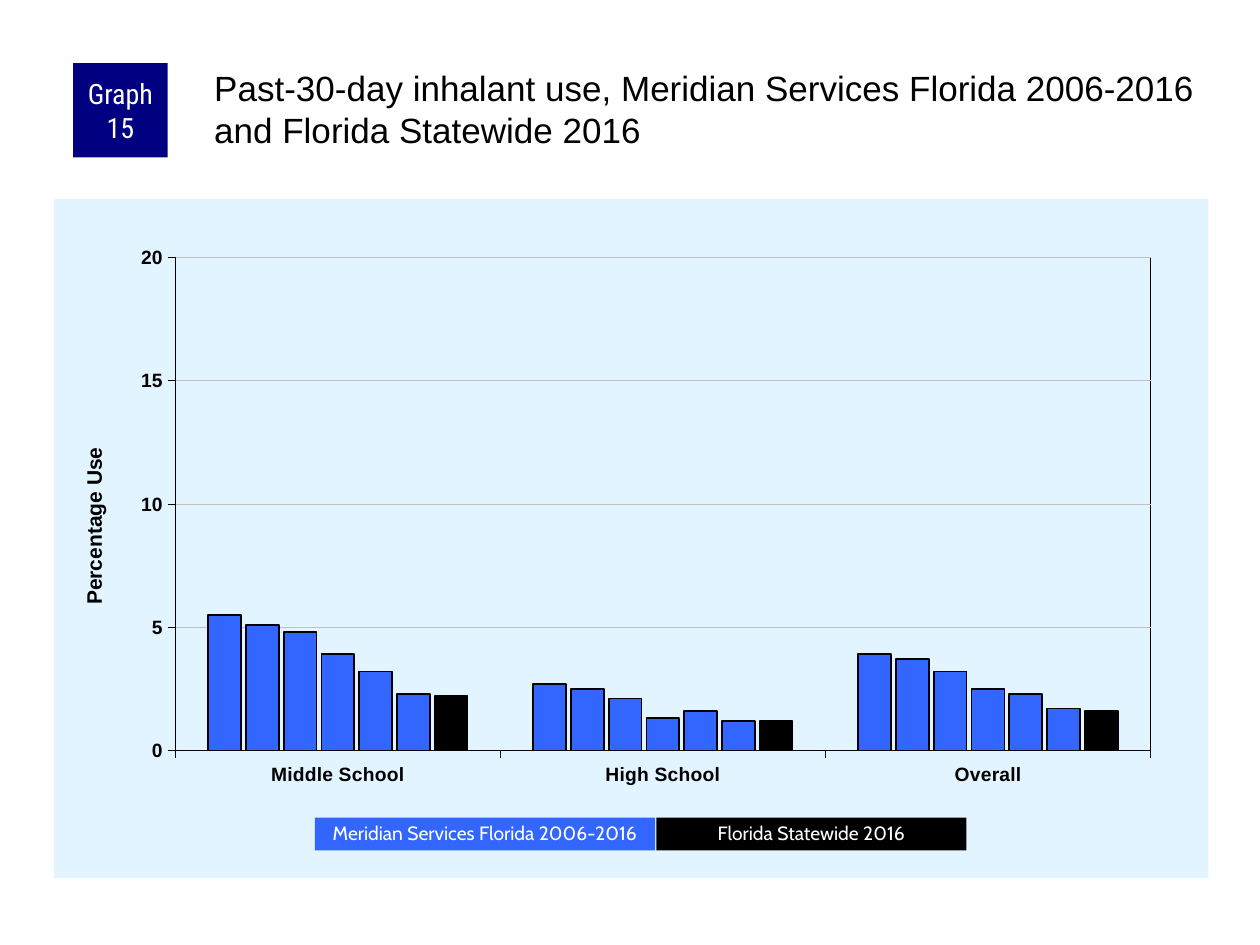
from lxml import etree
from pptx import Presentation
from pptx import util as u
from pptx.chart.data import CategoryChartData
from pptx.dml.color import RGBColor
from pptx.enum import chart as ch, shapes, text
from pptx.oxml import parse_xml
from pptx.oxml.ns import qn

PX = 9144  # EMU per px, 100 px to the inch
COLORS = {
    "panel": "E1F4FF", "region": "3366FF", "state": "000000", "badge": "000080",
    "ink": "000000", "grid": "C0C0C0", "light": "FFFFFF",
}
REGION = "Meridian Services Florida 2006-2016"
STATE = "Florida Statewide 2016"
SCHOOLS = ["Middle School", "High School", "Overall"]
USE_RATES = [
    (5.5, 2.7, 3.9), (5.1, 2.5, 3.7), (4.8, 2.1, 3.2), (3.9, 1.3, 2.5),
    (3.2, 1.6, 2.3), (2.3, 1.2, 1.7), (2.2, 1.2, 1.6),
]
NS = ('xmlns:c="http://schemas.openxmlformats.org/drawingml/2006/chart" '
      'xmlns:a="http://schemas.openxmlformats.org/drawingml/2006/main"')


def px(*lengths):
    return [u.Emu(length * PX) for length in lengths]


def color(name):
    return RGBColor.from_string(COLORS[name])


def style_font(font, size, name, ink, bold=False):
    font.size, font.name, font.bold = u.Pt(size), name, bold
    font.color.rgb = color(ink)


def style_line(line, ink, width):
    line.color.rgb = color(ink)
    line.width = u.Pt(width)


def set_insets(frame, left, top, right, bottom):
    frame.margin_left, frame.margin_top, frame.margin_right, frame.margin_bottom = px(
        left, top, right, bottom)


def add_label(slide, box, wording, fill, size, font, insets, spacing=1.0):
    """Filled rectangle with centred light text."""
    label = slide.shapes.add_shape(shapes.MSO_SHAPE.RECTANGLE, *px(*box))
    label.shadow.inherit = False
    label.fill.solid()
    label.fill.fore_color.rgb = color(fill)
    label.line.fill.background()
    frame = label.text_frame
    frame.word_wrap = True
    frame.vertical_anchor = text.MSO_ANCHOR.MIDDLE
    set_insets(frame, *insets)
    frame.text = wording
    line = frame.paragraphs[0]
    line.alignment = text.PP_ALIGN.CENTER
    line.line_spacing = spacing
    style_font(line.runs[0].font, size, font, "light")


def set_title(slide, box, wording):
    title = slide.shapes.title
    title.left, title.top, title.width, title.height = px(*box)
    frame = title.text_frame
    frame.word_wrap = True
    frame.auto_size = text.MSO_AUTO_SIZE.NONE
    frame.vertical_anchor = text.MSO_ANCHOR.TOP
    set_insets(frame, 3, 3, 0, 0)
    frame.text = wording
    heading = frame.paragraphs[0]
    heading.alignment = text.PP_ALIGN.LEFT
    style_font(heading.runs[0].font, 20, "Arial", "ink")


def manual_layout(x, y, size=None):
    parts = [("xMode", "edge"), ("yMode", "edge"), ("x", x), ("y", y)]
    if size:
        parts = [("layoutTarget", "inner"), *parts, ("w", size[0]), ("h", size[1])]
    body = "".join(f'<c:{tag} val="{value}"/>' for tag, value in parts)
    return parse_xml(f"<c:layout {NS}><c:manualLayout>{body}</c:manualLayout></c:layout>")


def replace_layout(parent, layout, position):
    for old in parent.findall(qn("c:layout")):
        parent.remove(old)
    parent.insert(position, layout)


def area_format(fill, line):
    return parse_xml(f"<c:spPr {NS}>{fill}<a:ln w=\"3175\">{line}</a:ln></c:spPr>")


def solid(name):
    return f'<a:solidFill><a:srgbClr val="{COLORS[name]}"/></a:solidFill>'


def format_areas(chart):
    """Panel fill, plot frame and plot position."""
    chart_part = chart.element.find(qn("c:chart"))
    chart_part.addnext(area_format(solid("panel"), "<a:noFill/>"))
    plot_area = chart_part.find(qn("c:plotArea"))
    replace_layout(plot_area, manual_layout(0.105, 0.086, (0.845, 0.726)), 0)
    plot_area.append(area_format("<a:noFill/>", solid("ink")))


def format_axes(chart):
    for axis in (chart.category_axis, chart.value_axis):
        axis.major_tick_mark = ch.XL_TICK_MARK.OUTSIDE
        axis.minor_tick_mark = ch.XL_TICK_MARK.NONE
        style_font(axis.tick_labels.font, 11, "Arial", "ink", True)
        style_line(axis.format.line, "ink", 0.25)
    rate = chart.value_axis
    rate.minimum_scale, rate.maximum_scale, rate.major_unit = 0, 20, 5
    rate.has_major_gridlines = True
    style_line(rate.major_gridlines.format.line, "grid", 0.25)
    rate.has_title = True
    caption = rate.axis_title.text_frame
    caption.text = "Percentage Use"
    style_font(caption.paragraphs[0].runs[0].font, 12, "Arial", "ink", True)
    body = caption._txBody.find(qn("a:bodyPr"))
    body.set("rot", "-5400000")
    body.set("vert", "horz")
    replace_layout(rate.axis_title._element, manual_layout(0.02, 0.36), 1)


def add_use_chart(slide, box):
    rates = CategoryChartData()
    rates.categories = SCHOOLS
    for number, values in enumerate(USE_RATES, 1):
        rates.add_series(f"Series {number}", values)
    chart = slide.shapes.add_chart(
        ch.XL_CHART_TYPE.COLUMN_CLUSTERED, *px(*box), rates).chart
    style_font(chart.font, 8, "Arial", "ink")
    chart.has_title = False
    chart.has_legend = False
    format_areas(chart)
    format_axes(chart)
    columns = chart.plots[0]
    columns.gap_width, columns.overlap = 200, -15
    columns.vary_by_categories = False
    for series in columns.series:
        is_state = series.name == f"Series {len(USE_RATES)}"
        series.format.fill.solid()
        series.format.fill.fore_color.rgb = color("state" if is_state else "region")
        style_line(series.format.line, "ink", 1)


def main():
    deck = Presentation()
    deck.slide_width, deck.slide_height = px(1000, 750)
    slide = deck.slides.add_slide(deck.slide_layouts[5])

    # Chart panel
    add_use_chart(slide, (43, 158, 916, 539))

    # Heading and its number badge
    add_label(slide, (58, 50, 75, 75), "Graph 15", "badge", 16,
              "Roboto Condensed", (5, 0, 5, 0))
    set_title(slide, (167, 50, 792, 83), f"Past-30-day inhalant use, {REGION} and {STATE}")

    # Colour key
    for left, width, wording, fill in ((250, 270, REGION, "region"),
                                       (521, 246, STATE, "state")):
        add_label(slide, (left, 649, width, 26), wording, fill, 11, "Cabin",
                  (10, 5, 10, 5), 0.9)

    deck.save("out.pptx")


if __name__ == "__main__":
    main()
